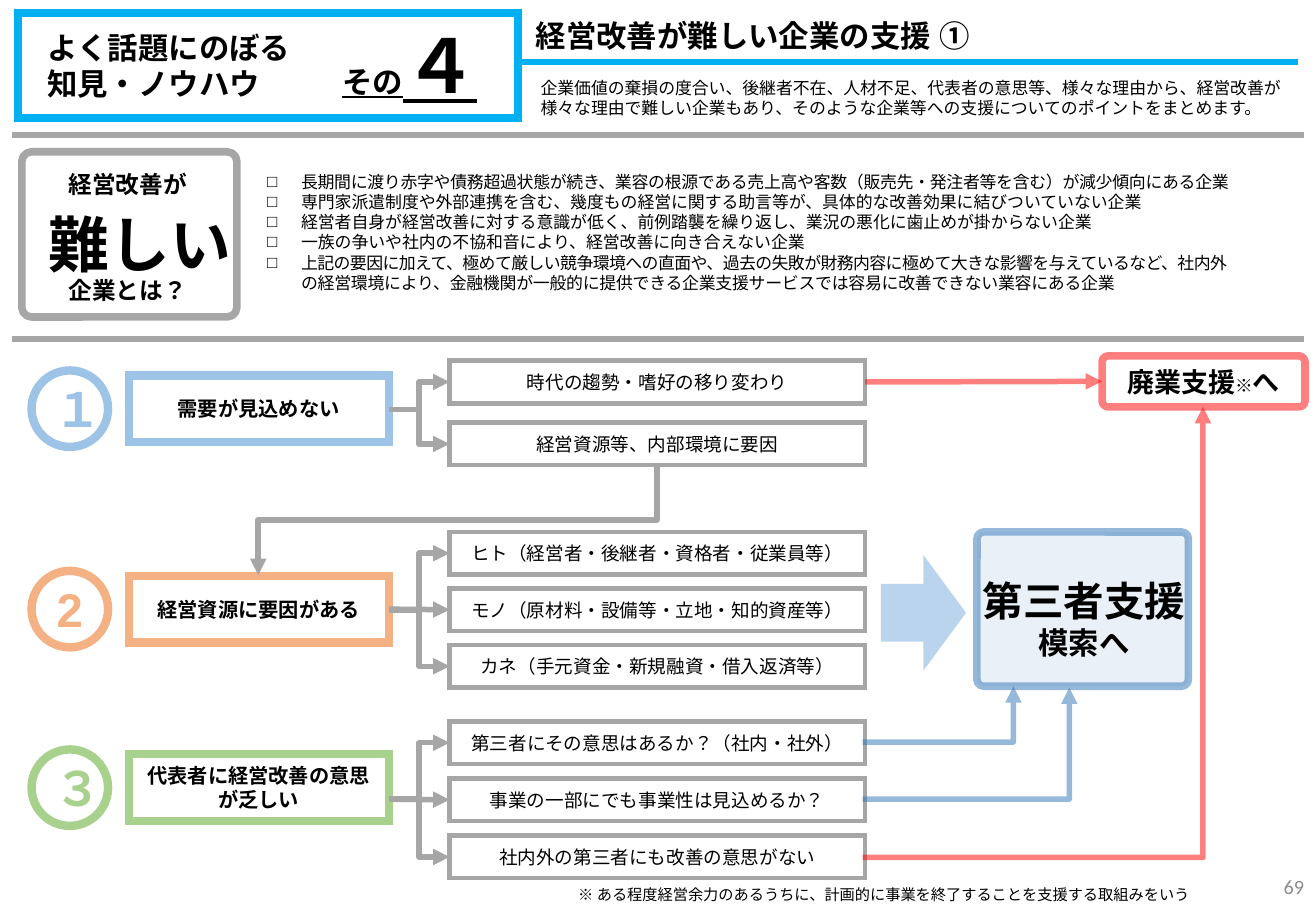
from dataclasses import dataclass

from lxml import etree
from pptx import Presentation
from pptx import util as u
from pptx.dml.color import RGBColor
from pptx.enum import shapes, text
from pptx.oxml.ns import qn


@dataclass(frozen=True)
class Theme:
    head: str = "Arial"
    body: str = "Calibri"
    black: str = "000000"
    white: str = "FFFFFF"
    grey: str = "A6A6A6"
    number: str = "8C8C8C"
    cyan: str = "00B0F0"
    sky: str = "9DC3E6"
    orange: str = "F4B183"
    green: str = "A9D18E"
    red: str = "FF0000"
    blue: str = "2E75B6"
    huge: float = 44
    large: float = 36
    digit: float = 28
    goal: float = 24
    title: float = 18
    exit: float = 16
    question: float = 14
    stage: float = 12
    cause: float = 11
    mark: float = 10.5
    small: float = 10
    note: float = 9
    arrow: float = 3.25
    rule: float = 3.5
    frame: float = 4.5
    stage_line: float = 5
    cause_line: float = 2.75


T = Theme()
SHAPE = shapes.MSO_SHAPE
ALIGN = text.PP_ALIGN
MIDDLE = text.MSO_ANCHOR.MIDDLE

# Content
TITLE = "経営改善が難しい企業の支援 ①"
SUMMARY = ("企業価値の棄損の度合い、後継者不在、人材不足、代表者の意思等、様々な理由から、経営改善が"
           "様々な理由で難しい企業もあり、そのような企業等への支援についてのポイントをまとめます。")
TOPIC = ["よく話題にのぼる", "知見・ノウハウ"]
QUESTION = [  # words, size, left, top, width, height
    ("経営改善が", T.question, 0.09, 1.35, 1.92, 0.34),
    ("難しい", T.large, 0.24, 1.65, 1.82, 0.71),
    ("企業とは？", T.question, 0.09, 2.22, 1.92, 0.34),
]
SIGNS = [  # words, letter spacing of each line in hundredths of a point
    ("長期間に渡り赤字や債務超過状態が続き、業容の根源である売上高や客数（販売先・発注者等を含む）が減少傾向にある企業", [-13]),
    ("専門家派遣制度や外部連携を含む、幾度もの経営に関する助言等が、具体的な改善効果に結びついていない企業", [0]),
    ("経営者自身が経営改善に対する意識が低く、前例踏襲を繰り返し、業況の悪化に歯止めが掛からない企業", [0]),
    ("一族の争いや社内の不協和音により、経営改善に向き合えない企業", [0]),
    ("上記の要因に加えて、極めて厳しい競争環境への直面や、過去の失敗が財務内容に極めて大きな影響を与えているなど、社内外\v"
     "の経営環境により、金融機関が一般的に提供できる企業支援サービスでは容易に改善できない業容にある企業", [-30, -10]),
]
STAGES = [  # digit, words, colour, box top, branch height, first cause top, pitch, causes
    ("１", "需要が見込めない", T.sky, 3.09, 3.37, 2.97, 0.51,
     ["時代の趨勢・嗜好の移り変わり", "経営資源等、内部環境に要因"]),
    ("2", "経営資源に要因がある", T.orange, 4.74, 5.02, 4.38, 0.465,
     ["ヒト（経営者・後継者・資格者・従業員等）", "モノ（原材料・設備等・立地・知的資産等）",
      "カネ（手元資金・新規融資・借入返済等）"]),
    ("３", "代表者に経営改善の意思が乏しい", T.green, 6.21, 6.58, 5.94, 0.47,
     ["第三者にその意思はあるか？（社内・社外）", "事業の一部にでも事業性は見込めるか？",
      "社内外の第三者にも改善の意思がない"]),
]
GOAL = [[("第三者支援", T.goal)], [("模索へ", T.title)]]
EXIT = [[("廃業支援", T.exit), ("※", T.mark), ("へ", T.exit)]]
FOOTNOTE = "※ ある程度経営余力のあるうちに、計画的に事業を終了することを支援する取組みをいう"

STAGE_LEFT, STAGE_WIDTH, STAGE_HEIGHT = 1.06, 2.14, 0.55
CAUSE_LEFT, CAUSE_WIDTH, CAUSE_HEIGHT = 3.7, 3.42, 0.35
CIRCLE = 0.63

deck = Presentation()
deck.slide_width, deck.slide_height = u.Inches(10.83), u.Inches(7.5)
page = deck.slides.add_slide(deck.slide_layouts[5])


def inches(*lengths):
    return [u.Inches(length) for length in lengths]


def fade(fill_parent, percent):
    colour = fill_parent.find(qn("a:solidFill")).find(qn("a:srgbClr"))
    etree.SubElement(colour, qn("a:alpha")).set("val", str(percent * 1000))


def style(span, size, font, colour=T.black, bold=False):
    span.font.size, span.font.name, span.font.bold = u.Pt(size), font, bold
    span.font.color.rgb = RGBColor.from_string(colour)
    properties = span.font._element
    properties.set("lang", "ja-JP")
    east = etree.Element(qn("a:ea"), typeface=font)
    properties.find(qn("a:latin")).addnext(east)


def write(shape, lines, font, colour=T.black, bold=False, align=ALIGN.CENTER, anchor=MIDDLE):
    """Each line is a list of (words, size)."""
    frame = shape.text_frame
    frame.word_wrap, frame.vertical_anchor = True, anchor
    for index, line in enumerate(lines):
        para = frame.paragraphs[0] if index == 0 else frame.add_paragraph()
        para.alignment = align
        for words, size in line:
            span = para.add_run()
            span.text = words
            style(span, size, font, colour, bold)


def label(area, lines, font, align=ALIGN.LEFT, anchor=text.MSO_ANCHOR.TOP, **look):
    box = page.shapes.add_textbox(*inches(*area))
    write(box, lines, font, align=align, anchor=anchor, **look)
    return box


def outline(kind, area, line=None, width=0, fill=None, alpha=None, line_alpha=None, corner=None):
    box = page.shapes.add_shape(kind, *inches(*area))
    box.shadow.inherit = False
    if corner is not None:
        box.adjustments[0] = corner
    if fill:
        box.fill.solid()
        box.fill.fore_color.rgb = RGBColor.from_string(fill)
        if alpha:
            fade(box.element.spPr, alpha)
    else:
        box.fill.background()
    if line:
        box.line.color.rgb = RGBColor.from_string(line)
        box.line.width = u.Pt(width)
        edge = box.element.spPr.find(qn("a:ln"))
        if line_alpha:
            fade(edge, line_alpha)
        if kind == SHAPE.RECTANGLE:
            etree.SubElement(edge, qn("a:miter")).set("lim", "800000")
    else:
        box.line.fill.background()
    return box


def connect(start, end, colour=T.grey, width=T.arrow, alpha=None, bend=None, head=True):
    """bend: None is straight, 3 has two corners, 2 has one corner."""
    kind = shapes.MSO_CONNECTOR.ELBOW if bend else shapes.MSO_CONNECTOR.STRAIGHT
    link = page.shapes.add_connector(kind, *inches(*start, *end))
    link.line.color.rgb = RGBColor.from_string(colour)
    link.line.width = u.Pt(width)
    properties = link.element.spPr
    if bend == 2:
        properties.find(qn("a:prstGeom")).set("prst", "bentConnector2")
    edge = properties.find(qn("a:ln"))
    if alpha:
        fade(edge, alpha)
    if head:
        etree.SubElement(edge, qn("a:tailEnd")).set("type", "triangle")
    etree.SubElement(properties, qn("a:effectLst"))
    return link


# Header
outline(SHAPE.RECTANGLE, (0.15, 0.11, 4.11, 0.86), T.cyan, 4.75)
label((0.29, 0.19, 2.68, 0.71), [[(words, T.title)] for words in TOPIC], T.head, bold=True)
count = label((2.72, 0.11, 1.75, 0.84), [[("その", T.title), ("４", T.huge)]], T.head, bold=True)
for span in count.text_frame.paragraphs[0].runs:
    span.font.underline = True
title = page.shapes.title
title.left, title.top, title.width, title.height = inches(4.31, 0.09, 6.36, 0.4)
title.text_frame.auto_size = text.MSO_AUTO_SIZE.NONE
write(title, [[(TITLE, T.title)]], T.head, bold=True, align=ALIGN.LEFT, anchor=text.MSO_ANCHOR.TOP)
label((4.35, 0.59, 6.35, 0.44), [[(SUMMARY, T.small)]], T.body)
connect((4.25, 0.51), (10.68, 0.51), T.cyan, T.rule, head=False)
for height in (1.11, 2.79):
    connect((0.1, height), (10.73, height), T.grey, T.rule, head=False)

# Question and checklist
outline(SHAPE.ROUNDED_RECTANGLE, (0.18, 1.25, 1.77, 1.36), T.grey, T.frame, corner=0.058)
for words, size, *area in QUESTION:
    label(area, [[(words, size)]], T.head, align=ALIGN.CENTER, bold=True)
checklist = label((2.1, 1.36, 8.84, 1.11), [[] for _ in SIGNS], T.head)
for para, (words, spacings) in zip(checklist.text_frame.paragraphs, SIGNS):
    para.text = words
    for span, spacing in zip(para.runs, spacings):
        style(span, T.small, T.head)
        span.font._element.set("spc", str(spacing))
    indent = u.Inches(0.28)
    properties = para._p.get_or_add_pPr()
    properties.set("marL", str(indent))
    properties.set("indent", str(-indent))
    etree.SubElement(properties, qn("a:buFont")).set("typeface", T.head)
    etree.SubElement(properties, qn("a:buChar")).set("char", "□")

# Stages, their causes and the branches between them
causes = []
for digit, words, colour, top, branch, first, pitch, names in STAGES:
    circle = outline(SHAPE.OVAL, (0.26, top - 0.04, CIRCLE, CIRCLE), colour, T.stage_line, T.white)
    write(circle, [[(digit, T.digit)]], T.head, colour, True)
    stage = outline(SHAPE.RECTANGLE, (STAGE_LEFT, top, STAGE_WIDTH, STAGE_HEIGHT),
                    colour, T.stage_line, T.white)
    write(stage, [[(words, T.stage)]], T.body, bold=True)
    for index, name in enumerate(names):
        cause_top = first + index * pitch
        cause = outline(SHAPE.RECTANGLE, (CAUSE_LEFT, cause_top, CAUSE_WIDTH, CAUSE_HEIGHT),
                        T.grey, T.cause_line, T.white)
        write(cause, [[(name, T.cause)]], T.body)
        causes.append(cause)
        middle = cause_top + CAUSE_HEIGHT / 2
        straight = abs(middle - branch) < 0.02
        link = connect((STAGE_LEFT + STAGE_WIDTH, branch), (CAUSE_LEFT, middle),
                       bend=None if straight else 3)
        if straight:
            link.end_connect(cause, 1)
            if abs(top + STAGE_HEIGHT / 2 - branch) < 0.02:
                link.begin_connect(stage, 3)

# Outcomes
goal = outline(SHAPE.ROUNDED_RECTANGLE, (8.04, 4.38, 1.74, 1.27), T.blue, T.frame,
               T.blue, alpha=10, line_alpha=50, corner=0.044)
label((7.69, 4.69, 2.46, 0.81), GOAL, T.head, align=ALIGN.CENTER, bold=True)
closing = outline(SHAPE.ROUNDED_RECTANGLE, (9.07, 2.93, 1.67, 0.42), T.red, T.frame,
                  T.white, line_alpha=50, corner=0.118)
write(closing, EXIT, T.head, bold=True)
block = outline(SHAPE.RIGHT_ARROW, (7.25, 4.57, 0.7, 0.95), fill=T.sky, alpha=70)

# Paths: second cause down to stage 2 (a quarter turn), then causes to outcomes
down = connect((3.31, 2.64), (4.22, 5.92), bend=3)
down.element.spPr.find(qn("a:xfrm")).set("rot", str(90 * 60000))
to_exit = connect((7.12, 3.14), (9.07, 3.14), T.red, alpha=50)
to_exit.begin_connect(causes[0], 3)
to_exit.end_connect(closing, 1)
for start, end, colour in [((7.1, 7.06), (9.9, 3.35), T.red),
                           ((7.1, 6.58), (8.8, 5.66), T.blue),
                           ((7.1, 6.11), (8.34, 5.65), T.blue)]:
    connect(start, end, colour, alpha=50, bend=2)

# Footer
label((4.66, 7.24, 5.81, 0.25), [[(FOOTNOTE, T.note)]], T.body)
label((10.3, 7.1, 0.53, 0.4), [[("69", T.stage)]], T.body, ALIGN.RIGHT, MIDDLE, colour=T.number)

deck.save("out.pptx")
